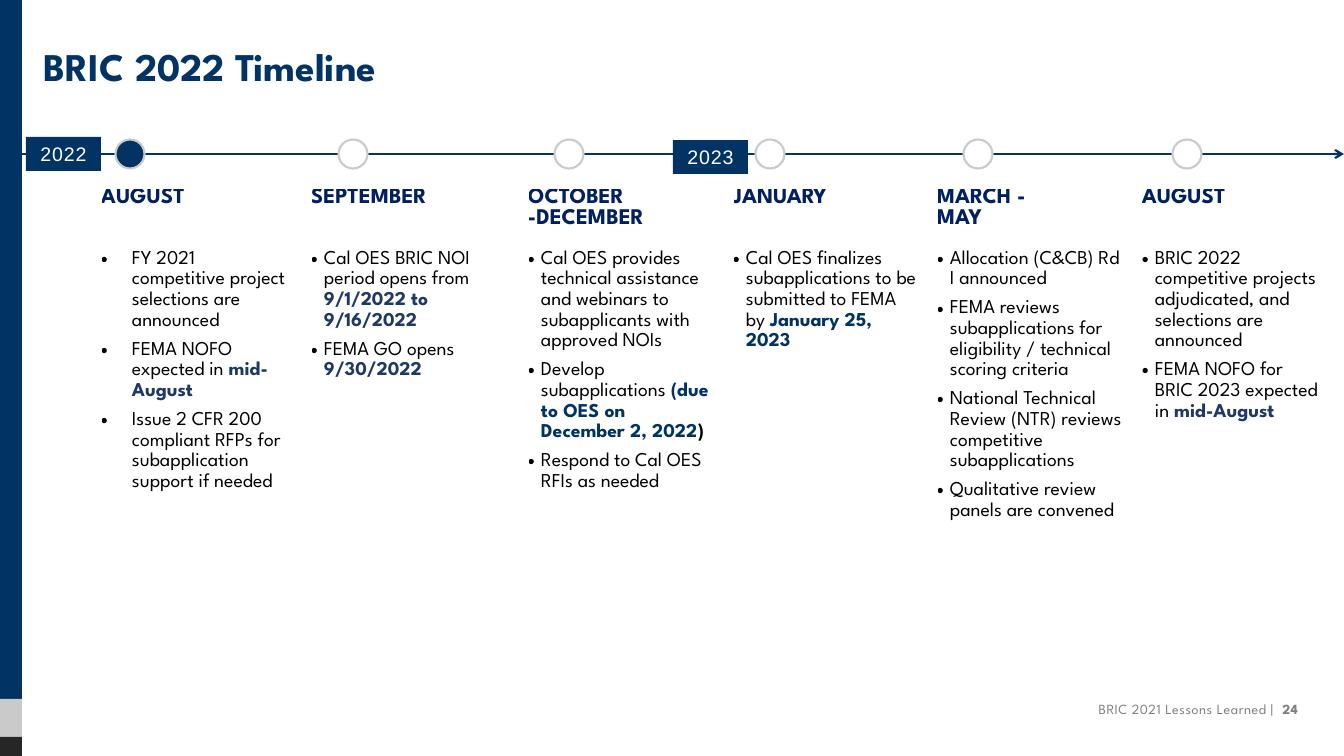
import pptx
import pptx.util
import pptx.dml.color
import pptx.enum.shapes
import pptx.enum.text
import pptx.oxml.ns
from lxml import etree

RGB = pptx.dml.color.RGBColor
NAVY = RGB(0x01, 0x33, 0x65)
HEADING = RGB(0x00, 0x20, 0x60)
DATE = RGB(0x20, 0x38, 0x64)
DEADLINE = RGB(0x00, 0x33, 0x64)
BLACK = RGB(0, 0, 0)
WHITE = RGB(0xFF, 0xFF, 0xFF)
SILVER = RGB(0xCA, 0xCA, 0xCA)
CHARCOAL = RGB(0x26, 0x26, 0x26)
GREY = RGB(0x7F, 0x7F, 0x7F)
BODY_FONT, YEAR_FONT = "League Spartan", "Arial"

TITLE = "BRIC 2022 Timeline"
FOOTER, PAGE = "BRIC 2021 Lessons Learned |  ", "24"

# Each stage: heading lines, marker centre, column left, bullets.
# A bullet is a list of runs: plain text, or (bold text, colour).
STAGES = [
    (["AUGUST"], 130, 101, [
        ["FY 2021 competitive project selections are announced"],
        ["FEMA NOFO expected in ", ("mid-August", DATE)],
        ["Issue 2 CFR 200 compliant RFPs for subapplication support if needed"]]),
    (["SEPTEMBER"], 353, 311, [
        ["Cal OES BRIC NOI period opens from ", ("9/1/2022 to 9/16/2022", DATE)],
        ["FEMA GO opens ", ("9/30/2022", DATE)]]),
    (["OCTOBER -DECEMBER"], 569, 528, [
        ["Cal OES provides technical assistance and webinars to subapplicants with approved NOIs"],
        ["Develop subapplications ", ("(due to OES on December 2, 2022", DEADLINE), (")", BLACK)],
        ["Respond to Cal OES RFIs as needed"]]),
    (["JANUARY"], 770, 733, [
        ["Cal OES finalizes subapplications to be submitted to FEMA by ",
         ("January 25, 2023", DEADLINE)]]),
    (["MARCH -", "MAY"], 978, 937, [
        ["Allocation (C&CB) Rd I announced"],
        ["FEMA reviews subapplications for eligibility / technical scoring criteria"],
        ["National Technical Review (NTR) reviews competitive subapplications"],
        ["Qualitative review panels are convened"]]),
    (["AUGUST"], 1187, 1142, [
        ["BRIC 2022 competitive projects adjudicated, and selections are announced"],
        ["FEMA NOFO for BRIC 2023 expected in ", ("mid-August", DATE)]]),
]
YEARS = [("2022", 26, 137), ("2023", 673, 140)]
SIDEBAR = [(NAVY, 0, 699), (SILVER, 699, 737), (CHARCOAL, 737, 756)]

WIDTH, HEIGHT = 1344, 756
SIDEBAR_WIDTH = 22
AXIS_Y, MARKER = 154, 29
TABLE_TOP, TABLE_RIGHT = 188, 1346
ROW_HEIGHTS = [60, 300]
FIRST_INDENT, INDENT = 31, 13


def px(length):
    return pptx.util.Emu(round(length * 914400 / 100.8))


def add_run(paragraph, text, size, color, bold=False, font=BODY_FONT, spacing=None):
    run = paragraph.add_run()
    run.text = text
    run.font.name = font
    run.font.size = pptx.util.Pt(size)
    run.font.bold = bold
    run.font.color.rgb = color
    if spacing:
        run.font._element.set("spc", str(round(spacing * 100)))


def add_bullet(paragraph, indent):
    properties = paragraph._p.get_or_add_pPr()
    properties.set("marL", str(px(indent)))
    properties.set("indent", str(-px(indent)))
    for tag, name, value in (("a:buFont", "typeface", "Arial"), ("a:buChar", "char", "•")):
        etree.SubElement(properties, pptx.oxml.ns.qn(tag)).set(name, value)


def paragraphs(frame, items):
    """Pair each item with a paragraph, starting from the one already there."""
    for number, item in enumerate(items):
        yield (frame.add_paragraph() if number else frame.paragraphs[0]), item


def add_shape(slide, kind, left, top, width, height, fill, outline=None):
    shape = slide.shapes.add_shape(kind, px(left), px(top), px(width), px(height))
    shape.shadow.inherit = False
    shape.fill.solid()
    shape.fill.fore_color.rgb = fill
    if outline is None:
        shape.line.fill.background()
    else:
        shape.line.color.rgb = outline
        shape.line.width = pptx.util.Pt(1.5)
    return shape


def add_text_box(slide, left, top, width, height, bottom_inset=5):
    frame = slide.shapes.add_textbox(px(left), px(top), px(width), px(height)).text_frame
    frame.word_wrap = True
    frame.vertical_anchor = pptx.enum.text.MSO_ANCHOR.MIDDLE
    frame.margin_left = frame.margin_right = 0
    frame.margin_top, frame.margin_bottom = px(5), px(bottom_inset)
    return frame.paragraphs[0]


def add_stage_table(slide):
    lefts = [left for _, _, left, _ in STAGES] + [TABLE_RIGHT]
    table = slide.shapes.add_table(
        2, len(STAGES), px(lefts[0]), px(TABLE_TOP),
        px(TABLE_RIGHT - lefts[0]), px(sum(ROW_HEIGHTS))).table
    table.first_row = table.horz_banding = False
    for row, height in zip(table.rows, ROW_HEIGHTS):
        row.height = px(height)
    for column, (heading, _, left, bullets) in enumerate(STAGES):
        table.columns[column].width = px(lefts[column + 1] - left)
        heading_cell, bullet_cell = table.cell(0, column), table.cell(1, column)
        for cell in (heading_cell, bullet_cell):
            cell.fill.background()
            cell.margin_left = cell.margin_top = cell.margin_bottom = 0
            cell.margin_right = px(20)
        for paragraph, line in paragraphs(heading_cell.text_frame, heading):
            add_run(paragraph, line, 16, HEADING, bold=True)
        for paragraph, runs in paragraphs(bullet_cell.text_frame, bullets):
            add_bullet(paragraph, INDENT if column else FIRST_INDENT)
            paragraph.line_spacing = 1.14
            paragraph.space_before = pptx.util.Pt(0 if runs is bullets[0] else 3)
            paragraph.space_after = pptx.util.Pt(3)
            for run in runs:
                if isinstance(run, str):
                    add_run(paragraph, run, 14, BLACK)
                else:
                    add_run(paragraph, run[0], 14, run[1], bold=True)


def add_axis(slide):
    axis = slide.shapes.add_connector(
        pptx.enum.shapes.MSO_CONNECTOR.STRAIGHT, 0, px(AXIS_Y), px(WIDTH), px(AXIS_Y))
    axis.line.color.rgb = NAVY
    axis.line.width = pptx.util.Pt(1.5)
    etree.SubElement(axis.line._get_or_add_ln(), pptx.oxml.ns.qn("a:tailEnd")).set("type", "arrow")
    etree.SubElement(axis._element.spPr, pptx.oxml.ns.qn("a:effectLst"))


def main():
    kinds = pptx.enum.shapes.MSO_SHAPE
    align = pptx.enum.text.PP_ALIGN
    deck = pptx.Presentation()
    deck.slide_width, deck.slide_height = px(WIDTH), px(HEIGHT)
    slide = deck.slides.add_slide(deck.slide_layouts[6])

    for color, top, bottom in SIDEBAR:
        add_shape(slide, kinds.RECTANGLE, 0, top, SIDEBAR_WIDTH, bottom - top, color)
    add_run(add_text_box(slide, 44, 28, 1253, 85, bottom_inset=15), TITLE, 28, NAVY, bold=True)

    add_stage_table(slide)
    add_axis(slide)
    for number, (_, center, _, _) in enumerate(STAGES):
        add_shape(slide, kinds.OVAL, center - MARKER / 2, AXIS_Y - MARKER / 2, MARKER, MARKER,
                  WHITE if number else NAVY, SILVER)
    for year, left, top in YEARS:
        frame = add_shape(slide, kinds.RECTANGLE, left, top, 75, 34, NAVY).text_frame
        frame.vertical_anchor = pptx.enum.text.MSO_ANCHOR.MIDDLE
        frame.paragraphs[0].alignment = align.CENTER
        add_run(frame.paragraphs[0], year, 14, WHITE, font=YEAR_FONT, spacing=0.6)

    footer = add_text_box(slide, 483, 694, 815, 29)
    footer.alignment = align.RIGHT
    add_run(footer, FOOTER, 10, GREY, spacing=0.4)
    add_run(footer, PAGE, 10, GREY, bold=True, spacing=0.4)
    deck.save("out.pptx")


if __name__ == "__main__":
    main()
